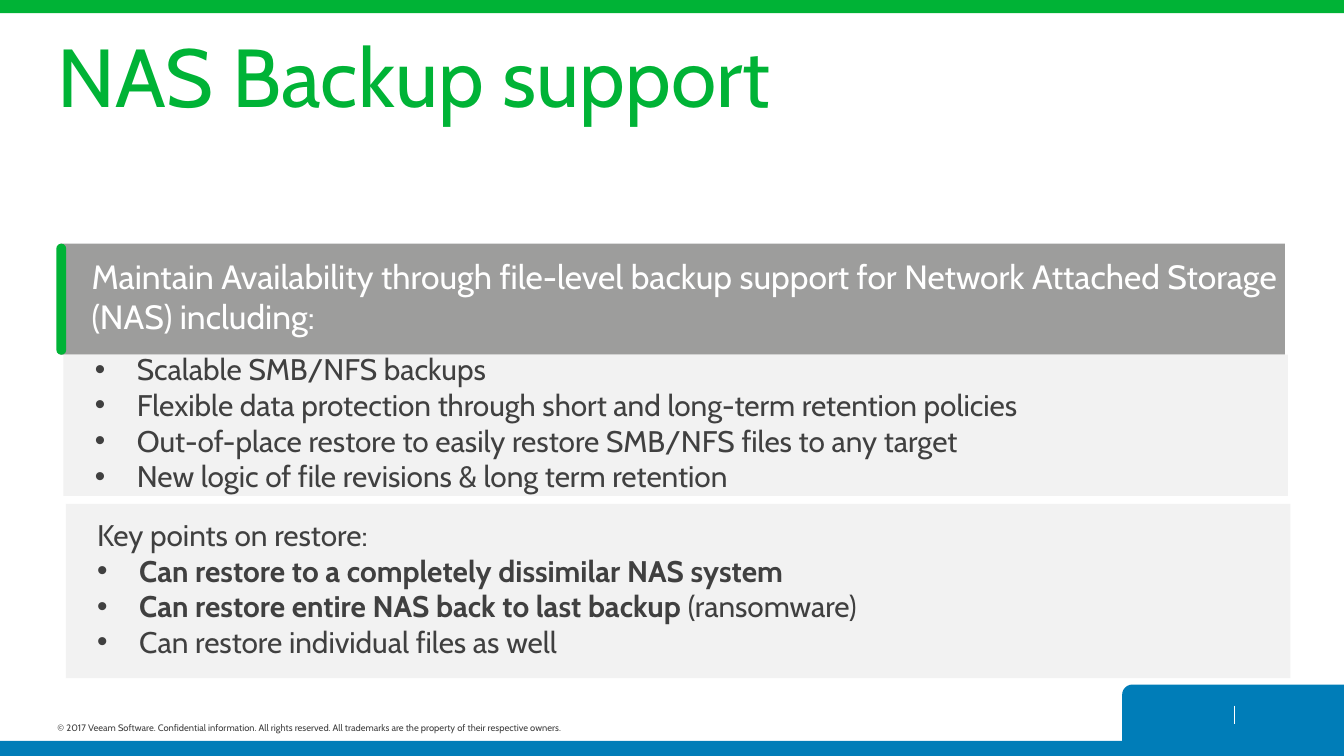
"""Builds the NAS backup support slide."""
from lxml.etree import SubElement
from pptx import Presentation
from pptx.dml.color import RGBColor
from pptx.enum.shapes import MSO_CONNECTOR, MSO_SHAPE
from pptx.enum.text import MSO_ANCHOR, PP_ALIGN
from pptx.oxml.ns import qn
from pptx.util import Cm, Pt

FONT = "Cabin"
GREEN, BLUE, GREY = "00B336", "007DB8", "9D9D9C"
PALE, DARK, WHITE = "F2F2F2", "404040", "FFFFFF"
WIDE, HIGH = 33.87, 19.05
LEFT = 1.45
PANEL = 30.86
INSET = (0.79, 0.18, 0.18, 0.33)
HANG = 1.06

TITLE = "NAS Backup support"
LEGAL = ("© 2017 Veeam Software. Confidential information. All rights reserved. "
         "All trademarks are the property of their respective owners.")
INTRO = ("Maintain Availability through file-level backup support for "
         "Network Attached Storage (NAS) including:")

# Each line: bullet, bold lead, plain tail
BACKUP = [
    (True, "", "Scalable SMB/NFS backups"),
    (True, "", "Flexible data protection through short and long-term retention policies"),
    (True, "", "Out-of-place restore to easily restore SMB/NFS files to any target"),
    (True, "", "New logic of file revisions & long term retention"),
]
RESTORE = [
    (False, "", "Key points on restore:"),
    (True, "Can restore to a completely dissimilar NAS system", ""),
    (True, "Can restore entire NAS back to last backup", " (ransomware)"),
    (True, "", "Can restore individual files as well"),
]
PANELS = [
    (1.52, 6.14, 2.8, GREY, WHITE, 24, [(False, "", INTRO)]),
    (1.6, 8.94, 3.56, PALE, DARK, 21.3, BACKUP),
    (1.66, 12.7, 4.39, PALE, DARK, 21.3, RESTORE),
]


def paint(fmt, hue):
    fmt.solid()
    fmt.fore_color.rgb = RGBColor.from_string(hue)


def block(kind, x, y, w, h, hue):
    shape = slide.shapes.add_shape(kind, Cm(x), Cm(y), Cm(w), Cm(h))
    shape.shadow.inherit = False
    paint(shape.fill, hue)
    shape.line.fill.background()
    return shape


def style(run, size, hue, bold=False):
    run.font.name = FONT
    run.font.size = Pt(size)
    run.font.bold = bold
    paint(run.font.fill, hue)


def pad(frame, sides):
    (frame.margin_left, frame.margin_top,
     frame.margin_right, frame.margin_bottom) = map(Cm, sides)


def label(text, x, y, w, h, size, hue, wrap):
    frame = slide.shapes.add_textbox(Cm(x), Cm(y), Cm(w), Cm(h)).text_frame
    pad(frame, (0, 0, 0, 0))
    frame.word_wrap = wrap
    frame.text = text
    style(frame.paragraphs[0].runs[0], size, hue)


def write(frame, lines, size, hue):
    frame.text = "\n".join(lead + tail for _, lead, tail in lines)
    for para, (dot, lead, tail) in zip(frame.paragraphs, lines):
        para.alignment = PP_ALIGN.LEFT
        if dot:
            props = para._p.get_or_add_pPr()
            props.set("marL", str(Cm(HANG)))
            props.set("indent", str(-Cm(HANG)))
            SubElement(props, qn("a:buFont"), typeface="Arial")
            SubElement(props, qn("a:buChar"), char="•")
        if lead and tail:
            para.runs[0].text = lead
            para.add_run().text = tail
        for spot, run in enumerate(para.runs):
            style(run, size, hue, bool(lead) and spot == 0)


deck = Presentation()
deck.slide_width, deck.slide_height = Cm(WIDE), Cm(HIGH)
slide = deck.slides.add_slide(deck.slide_layouts[6])

label(LEGAL, LEFT, 18.21, 13.61, 0.28, 6.7, DARK, False)
tab = block(MSO_SHAPE.ROUND_1_RECTANGLE, 28.28, 17.25, 5.59, 1.55, BLUE)
tab.element.spPr.find(qn("a:xfrm")).set("flipH", "1")
block(MSO_SHAPE.RECTANGLE, 0, 18.67, WIDE, 0.38, BLUE)
mark = slide.shapes.add_connector(
    MSO_CONNECTOR.STRAIGHT, Cm(31.1), Cm(17.78), Cm(31.1), Cm(18.24))
paint(mark.line.fill, WHITE)
mark.line.width = Pt(0.75)
SubElement(mark.element.spPr, qn("a:effectLst"))
block(MSO_SHAPE.RECTANGLE, 0, 0, WIDE, 0.33, GREEN)
label(TITLE, LEFT, 0.64, 30.96, 2.51, 58.7, GREEN, True)

for x, y, h, fill, hue, size, lines in PANELS:
    frame = block(MSO_SHAPE.RECTANGLE, x, y, PANEL, h, fill).text_frame
    pad(frame, INSET)
    frame.word_wrap = True
    frame.vertical_anchor = MSO_ANCHOR.MIDDLE
    write(frame, lines, size, hue)

edge = block(MSO_SHAPE.ROUNDED_RECTANGLE, 1.42, 6.14, 0.25, 2.8, GREEN)
edge.adjustments[0] = 0.5

deck.save("out.pptx")
